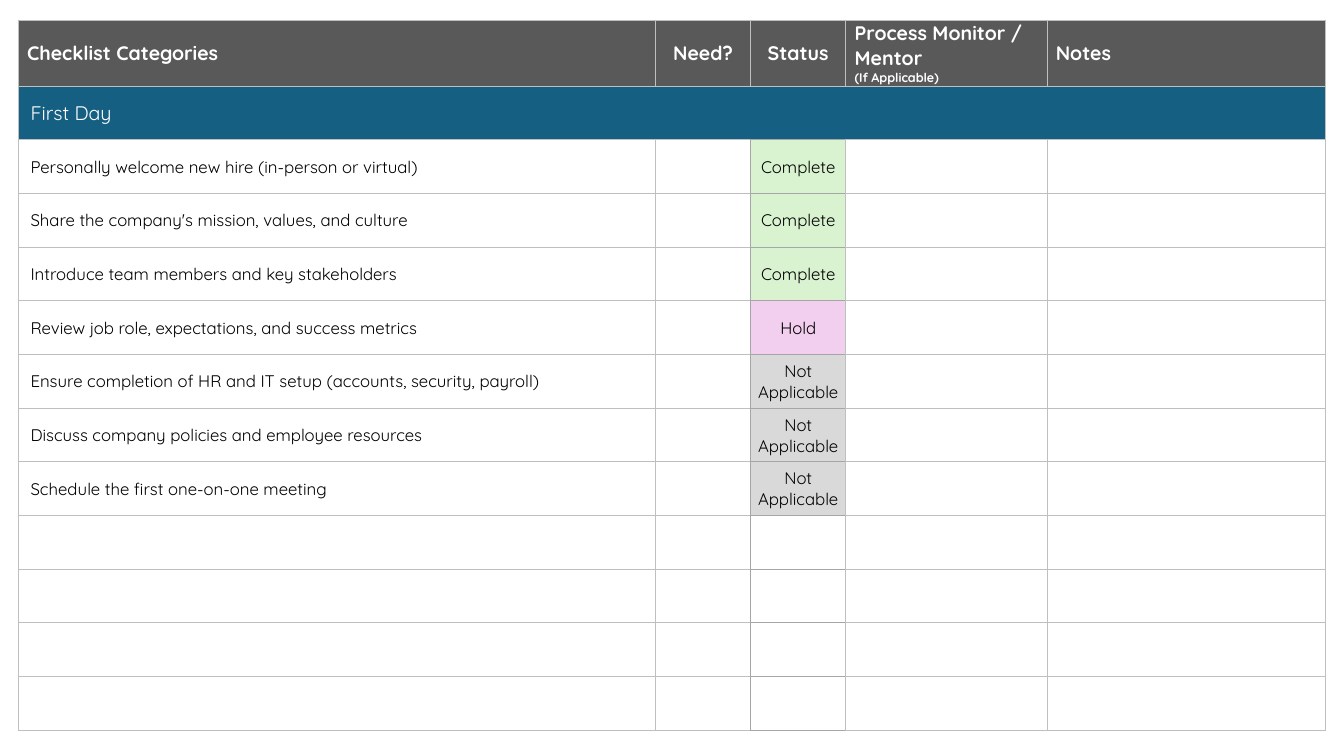
from dataclasses import dataclass

from lxml import etree
from pptx import Presentation
from pptx.dml.color import RGBColor
from pptx.enum.text import MSO_ANCHOR, PP_ALIGN
from pptx.oxml.ns import qn
from pptx.util import Pt

LEFT = PP_ALIGN.LEFT
CENTER = PP_ALIGN.CENTER
MIDDLE = MSO_ANCHOR.MIDDLE


@dataclass(frozen=True)
class Theme:
    font: str = "Quicksand"
    white: str = "FFFFFF"
    black: str = "000000"
    header: str = "595959"
    section: str = "156082"
    complete: str = "D9F2D0"
    hold: str = "F2CFEE"
    not_applicable: str = "D9D9D9"
    border: str = "BFBFBF"
    status_border: str = "A6A6A6"
    border_width: float = 0.5
    heading_size: float = 14
    body_size: float = 12
    note_size: float = 9


THEME = Theme()

TABLE_LEFT, TABLE_TOP = 13, 14.4
COLUMN_WIDTHS = [455.2, 68, 68, 143.7, 198.9]
ROW_HEIGHT = 38.35
ROW_COUNT = 13
NEED_COLUMN, STATUS_COLUMN = 1, 2
CELL_INSET, HEADER_INDENT, TASK_INDENT = 0.7, 6.3, 8.8

HEADERS = [
    ("Checklist Categories", LEFT),
    ("Need?", CENTER),
    ("Status", CENTER),
    ("Process Monitor / Mentor ", LEFT),
    ("Notes", LEFT),
]
MENTOR_COLUMN = 3
FIRST_TASK_ROW = 2
TASKS = [
    ("Personally welcome new hire (in-person or virtual)", "Complete"),
    ("Share the company's mission, values, and culture", "Complete"),
    ("Introduce team members and key stakeholders", "Complete"),
    ("Review job role, expectations, and success metrics", "Hold"),
    ("Ensure completion of HR and IT setup (accounts, security, payroll)", "Not Applicable"),
    ("Discuss company policies and employee resources", "Not Applicable"),
    ("Schedule the first one-on-one meeting", "Not Applicable"),
]
STATUS_FILLS = {
    "Complete": THEME.complete,
    "Hold": THEME.hold,
    "Not Applicable": THEME.not_applicable,
}


def add_text(paragraph, text, *, size=THEME.body_size, color=THEME.black, bold=False, align=LEFT):
    paragraph.alignment = align
    run = paragraph.add_run()
    run.text = text
    run.font.name = THEME.font
    run.font.size = Pt(size)
    run.font.bold = bold
    run.font.color.rgb = RGBColor.from_string(color)


def write_cell(cell, text, *, indent=CELL_INSET, **text_format):
    cell.vertical_anchor = MIDDLE
    cell.margin_left = Pt(indent)
    cell.margin_top = cell.margin_right = Pt(CELL_INSET)
    cell.margin_bottom = 0
    paragraph = cell.text_frame.paragraphs[0]
    add_text(paragraph, text, **text_format)
    return paragraph


def fill_cell(cell, color):
    cell.fill.solid()
    cell.fill.fore_color.rgb = RGBColor.from_string(color)


def set_borders(cell, **colors):
    properties = cell._tc.get_or_add_tcPr()
    for side in "LRTB":
        line = etree.SubElement(properties, qn(f"a:ln{side}"), w=str(Pt(THEME.border_width)))
        fill = etree.SubElement(line, qn("a:solidFill"))
        etree.SubElement(fill, qn("a:srgbClr"), val=colors.get(side, THEME.border))


def style_cell(cell, row, column):
    in_tasks = row >= FIRST_TASK_ROW
    if in_tasks and column == NEED_COLUMN:
        set_borders(cell, R=THEME.status_border)
    elif in_tasks and column == STATUS_COLUMN:
        set_borders(cell, **dict.fromkeys("LTB", THEME.status_border))
    else:
        set_borders(cell)
    if in_tasks and column == STATUS_COLUMN:
        cell.fill.background()
    else:
        fill_cell(cell, THEME.white if in_tasks else (THEME.header, THEME.section)[row])


def add_checklist_table(slide):
    frame = slide.shapes.add_table(
        ROW_COUNT, len(COLUMN_WIDTHS), Pt(TABLE_LEFT), Pt(TABLE_TOP),
        Pt(sum(COLUMN_WIDTHS)), Pt(ROW_COUNT * ROW_HEIGHT),
    )
    table = frame.table
    table.first_row = table.horz_banding = False
    for column, width in zip(table.columns, COLUMN_WIDTHS):
        column.width = Pt(width)
    for row in table.rows:
        row.height = Pt(ROW_HEIGHT)
    for row in range(ROW_COUNT):
        for column in range(len(COLUMN_WIDTHS)):
            style_cell(table.cell(row, column), row, column)
    return table


def write_headers(table):
    heading = dict(color=THEME.white, bold=True)
    for column, (title, align) in enumerate(HEADERS):
        indent = HEADER_INDENT if align == LEFT else CELL_INSET
        paragraph = write_cell(
            table.cell(0, column), title, indent=indent, align=align,
            size=THEME.heading_size, **heading,
        )
        if column == MENTOR_COLUMN:
            paragraph.add_line_break()
            add_text(paragraph, "(If Applicable)", size=THEME.note_size, **heading)


def write_section(table, title):
    section = table.cell(1, 0)
    section.merge(table.cell(1, len(COLUMN_WIDTHS) - 1))
    write_cell(section, title, indent=TASK_INDENT, size=THEME.heading_size, color=THEME.white)


def write_tasks(table):
    for row, (task, status) in enumerate(TASKS, FIRST_TASK_ROW):
        write_cell(table.cell(row, 0), task, indent=TASK_INDENT)
        status_cell = table.cell(row, STATUS_COLUMN)
        write_cell(status_cell, status, align=CENTER)
        fill_cell(status_cell, STATUS_FILLS[status])


def main():
    presentation = Presentation()
    presentation.slide_width, presentation.slide_height = Pt(960), Pt(540)
    slide = presentation.slides.add_slide(presentation.slide_layouts[6])
    table = add_checklist_table(slide)
    write_headers(table)
    write_section(table, "First Day")
    write_tasks(table)
    presentation.save("out.pptx")


if __name__ == "__main__":
    main()
